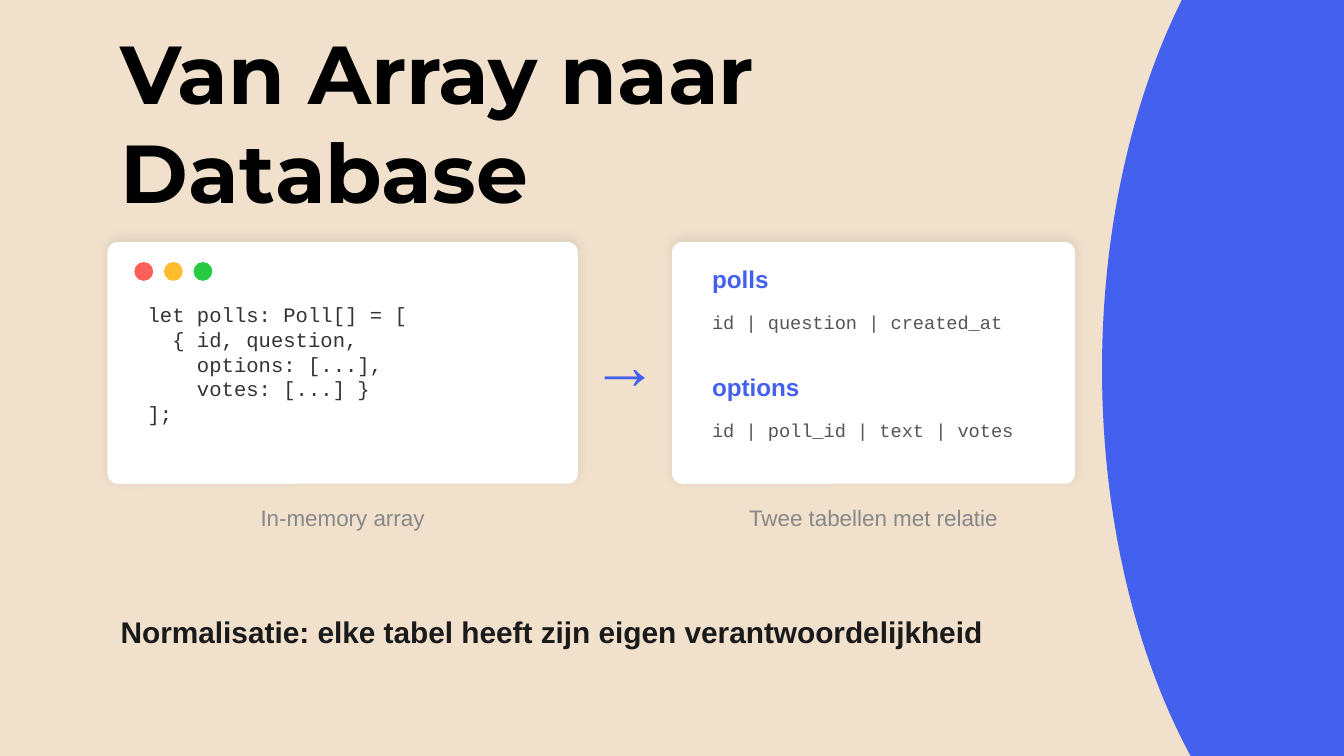
from lxml.etree import SubElement
from pptx import Presentation
from pptx.dml.color import RGBColor
from pptx.enum.shapes import MSO_SHAPE
from pptx.enum.text import MSO_ANCHOR, MSO_AUTO_SIZE, PP_ALIGN
from pptx.oxml.ns import qn
from pptx.util import Emu, Pt

EMU_PER_PX = 4572  # 200 px to the inch
BLUE = "4361EE"
CODE = """let polls: Poll[] = [
  { id, question,
    options: [...],
    votes: [...] }
];"""
TABLES = [("polls", "id | question | created_at"),
          ("options", "id | poll_id | text | votes")]


def px(*lengths):
    return [Emu(length * EMU_PER_PX) for length in lengths]


def rgb(hex_color):
    return RGBColor.from_string(hex_color)


def write(box, text, size, color, font="Arial", bold=False,
          align=PP_ALIGN.LEFT, anchor=MSO_ANCHOR.MIDDLE):
    frame = box.text_frame
    frame.text = text
    frame.word_wrap = True
    frame.auto_size = MSO_AUTO_SIZE.NONE
    frame.vertical_anchor = anchor
    for paragraph in frame.paragraphs:
        paragraph.alignment = align
        for run in paragraph.runs:
            run.font.name = font
            run.font.size = Pt(size)
            run.font.bold = bold
            run.font.color.rgb = rgb(color)


def add_text(slide, box, text, size, color, **style):
    write(slide.shapes.add_textbox(*px(*box)), text, size, color, **style)


def add_filled(slide, preset, box, color):
    shape = slide.shapes.add_shape(preset, *px(*box))
    shape.shadow.inherit = False
    shape.fill.solid()
    shape.fill.fore_color.rgb = rgb(color)
    shape.line.fill.background()
    return shape


def add_soft_shadow(shape):
    effects = shape._element.spPr.find(qn("a:effectLst"))
    shadow = SubElement(effects, qn("a:outerShdw"), blurRad=str(Pt(6)),
                        dist=str(Pt(2)), dir=str(270 * 60000),
                        algn="bl", rotWithShape="0")
    black = SubElement(shadow, qn("a:srgbClr"), val="000000")
    SubElement(black, qn("a:alpha"), val="8000")


def add_card(slide, box, caption):
    """White rounded card with a caption below it."""
    left, top, width, height = box
    card = add_filled(slide, MSO_SHAPE.ROUNDED_RECTANGLE, box, "FFFFFF")
    card.adjustments[0] = 0.044
    add_soft_shadow(card)
    add_text(slide, (left, top + height + 20, width, 60), caption, 12, "888888",
             align=PP_ALIGN.CENTER)


def add_code_window(slide, box):
    left, top, width, height = box
    add_card(slide, box, "In-memory array")
    for i, color in enumerate(("FF5F57", "FFBD2E", "28CA42")):
        add_filled(slide, MSO_SHAPE.OVAL,
                   (left + 40 + 44 * i, top + 30, 28, 28), color)
    add_text(slide, (left + 40, top + 80, width - 80, height - 120), CODE, 11,
             "333333", font="Courier New", anchor=MSO_ANCHOR.TOP)


def add_table_schema(slide, box):
    left, top, width, _ = box
    add_card(slide, box, "Twee tabellen met relatie")
    for i, (table, columns) in enumerate(TABLES):
        row_top = top + 20 + 160 * i
        add_text(slide, (left + 40, row_top, width - 80, 70), table, 13, BLUE,
                 bold=True)
        add_text(slide, (left + 40, row_top + 70, width - 80, 60), columns, 10,
                 "555555", font="Courier New")


def add_title(slide, box):
    title = slide.shapes.title
    title.left, title.top, title.width, title.height = px(*box)
    write(title, "Van Array naar\nDatabase", 44, "000000", font="Montserrat",
          bold=True)


def main():
    prs = Presentation()
    prs.slide_width, prs.slide_height = px(2000, 1125)
    slide = prs.slides.add_slide(prs.slide_layouts[5])
    slide.background.fill.solid()
    slide.background.fill.fore_color.rgb = rgb("F0E0CC")

    add_filled(slide, MSO_SHAPE.OVAL, (1640, -300, 1000, 1700), BLUE)
    add_title(slide, (160, 60, 1000, 240))
    add_code_window(slide, (160, 360, 700, 360))
    add_text(slide, (860, 460, 120, 160), "→", 36, BLUE, bold=True,
             align=PP_ALIGN.CENTER)
    add_table_schema(slide, (1000, 360, 600, 360))
    add_text(slide, (160, 900, 1400, 80),
             "Normalisatie: elke tabel heeft zijn eigen verantwoordelijkheid",
             16, "1A1A1A", bold=True)
    prs.save("out.pptx")


if __name__ == "__main__":
    main()
